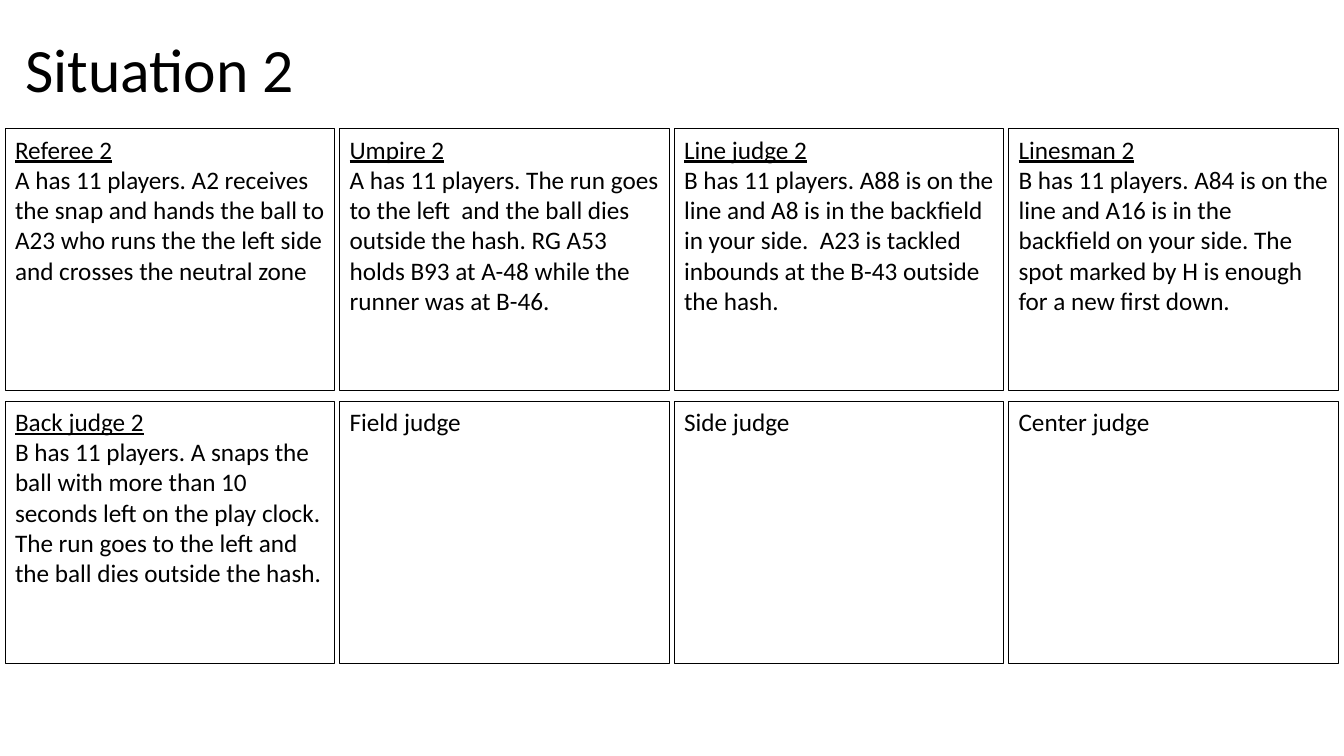
from pptx import Presentation
from pptx.dml.color import RGBColor
from pptx.enum.shapes import MSO_SHAPE
from pptx.enum.text import MSO_ANCHOR, PP_ALIGN
from pptx.util import Cm, Pt

COLOURS = {"ink": "000000"}
COLUMNS = 4
CARD_LEFT, CARD_TOP = 0.13, 3.25
CARD_WIDTH, CARD_HEIGHT = 8.31, 6.6
COLUMN_STEP, ROW_STEP = 8.43, 6.86

OFFICIALS = [
    ("Referee 2", "A has 11 players. A2 receives the snap and hands the ball to A23 "
                  "who runs the the left side and crosses the neutral zone"),
    ("Umpire 2", "A has 11 players. The run goes to the left  and the ball dies outside "
                 "the hash. RG A53 holds B93 at A-48 while the runner was at B-46."),
    ("Line judge 2", "B has 11 players. A88 is on the line and A8 is in the backfield in "
                     "your side.  A23 is tackled inbounds at the B-43 outside the hash."),
    ("Linesman 2", "B has 11 players. A84 is on the line and A16 is in the backfield on "
                   "your side. The spot marked by H is enough for a new first down."),
    ("Back judge 2", "B has 11 players. A snaps the ball with more than 10 seconds left on "
                     "the play clock. The run goes to the left and the ball dies outside "
                     "the hash."),
    ("Field judge", ""),
    ("Side judge", ""),
    ("Center judge", ""),
]


def apply_format(target, values):
    """Set each named attribute on the target."""
    for name, value in values.items():
        setattr(target, name, value)


class SituationSlide:
    """Holds the style and the current slide."""

    title_font = {"name": "Calibri", "size": Pt(44), "bold": False}
    card_font = {"name": "Calibri", "size": Pt(18)}
    card_frame = {"word_wrap": True, "vertical_anchor": MSO_ANCHOR.TOP}

    def __init__(self, presentation):
        """Add a title-only slide."""
        self.slide = presentation.slides.add_slide(presentation.slide_layouts[5])
        self.ink = RGBColor.from_string(COLOURS["ink"])

    def add_text(self, paragraph, text, font, **extra):
        """Put one left-aligned run in the paragraph."""
        paragraph.alignment = PP_ALIGN.LEFT
        run = paragraph.add_run()
        run.text = text
        apply_format(run.font, {**font, **extra})
        run.font.color.rgb = self.ink

    def title(self, text, left, top, width, height):
        """Place and fill the title placeholder."""
        shape = self.slide.shapes.title
        apply_format(shape, {"left": Cm(left), "top": Cm(top),
                             "width": Cm(width), "height": Cm(height)})
        apply_format(shape.text_frame, {"word_wrap": True,
                                        "vertical_anchor": MSO_ANCHOR.MIDDLE})
        paragraph = shape.text_frame.paragraphs[0]
        paragraph.line_spacing = 0.9
        self.add_text(paragraph, text, self.title_font)

    def card(self, role, report, left, top):
        """Draw an outlined card with a role and its report."""
        shape = self.slide.shapes.add_shape(
            MSO_SHAPE.RECTANGLE, Cm(left), Cm(top), Cm(CARD_WIDTH), Cm(CARD_HEIGHT))
        shape.shadow.inherit = False
        shape.fill.background()
        shape.line.color.rgb = self.ink
        shape.line.width = Pt(0.75)
        frame = shape.text_frame
        apply_format(frame, self.card_frame)
        self.add_text(frame.paragraphs[0], role, self.card_font, underline=bool(report))
        if report:
            self.add_text(frame.add_paragraph(), report, self.card_font)


def main():
    """Build and save the presentation."""
    presentation = Presentation()
    apply_format(presentation, {"slide_width": Cm(33.87), "slide_height": Cm(19.05)})
    situation = SituationSlide(presentation)
    situation.title("Situation 2", 0.38, 0, 8.31, 3.68)
    for index, (role, report) in enumerate(OFFICIALS):
        row, column = divmod(index, COLUMNS)
        situation.card(role, report, CARD_LEFT + column * COLUMN_STEP,
                       CARD_TOP + row * ROW_STEP)
    presentation.save("out.pptx")


if __name__ == "__main__":
    main()
